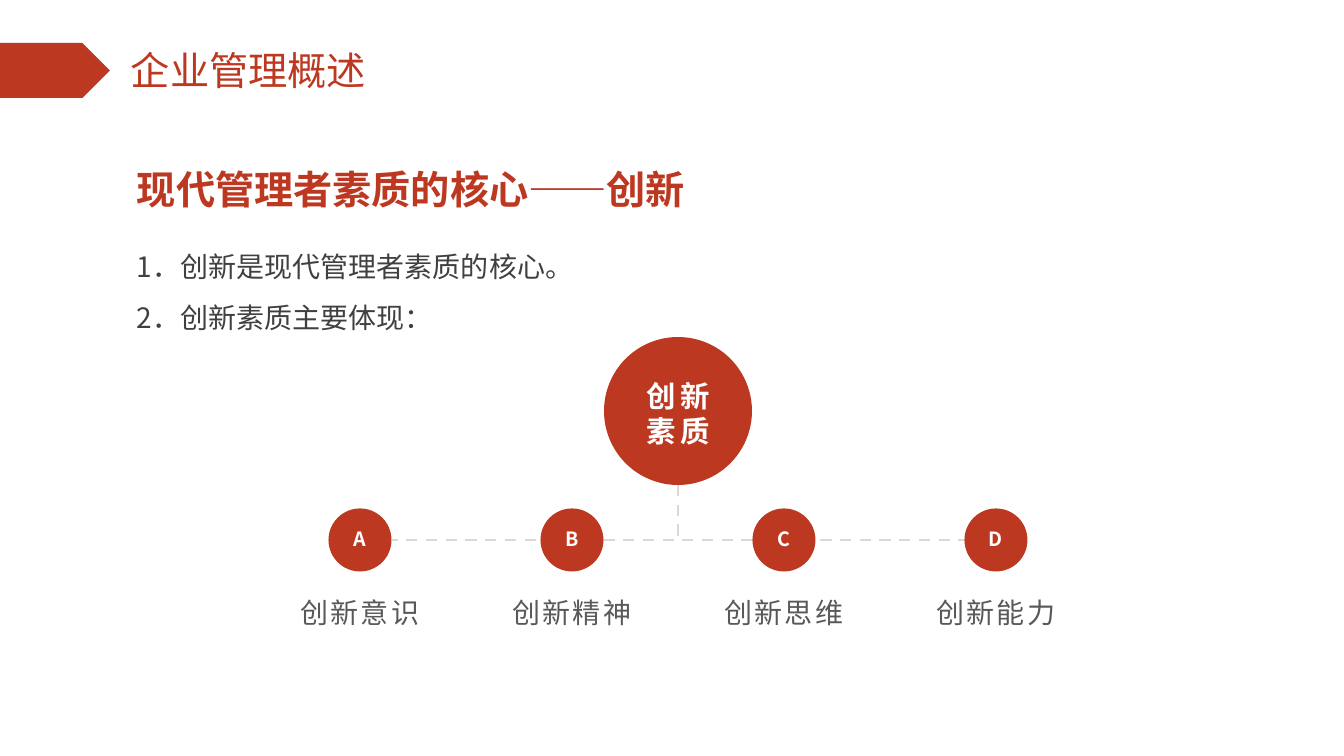
from pptx import Presentation
from pptx import util as u
from pptx.dml.color import RGBColor
from pptx.enum import dml, shapes, text
from pptx.oxml.ns import qn
from lxml import etree

# Content
TITLE = "企业管理概述"
HEADING = "现代管理者素质的核心——创新"
POINTS = ["1．创新是现代管理者素质的核心。", "2．创新素质主要体现："]
CORE = ["创新", "素质"]
QUALITIES = [("A", "创新意识"), ("B", "创新精神"), ("C", "创新思维"), ("D", "创新能力")]

FONT = "Noto Sans CJK SC"
RED = RGBColor(0xBD, 0x38, 0x20)
WHITE = RGBColor(0xFF, 0xFF, 0xFF)
DARK = RGBColor(0x40, 0x40, 0x40)
GRAY = RGBColor(0x59, 0x59, 0x59)
LIGHT = RGBColor(0xD9, 0xD9, 0xD9)

# Layout in px
SCALE = 914400 / 100.8
CORE_X, CORE_Y, CORE_SIZE = 678, 411, 148
NODE_Y, NODE_SIZE, NODE_PITCH = 540, 63, 212
LABEL_TOP, LABEL_WIDTH, LABEL_HEIGHT = 584, 180, 103


def px(*lengths):
    return [u.Emu(round(length * SCALE)) for length in lengths]


def write(shape, lines, size, color, bold=False, spacing=0, line_height=None,
          align=text.PP_ALIGN.LEFT, anchor=text.MSO_ANCHOR.TOP, insets=(10, 5, 10, 5)):
    frame = shape.text_frame
    frame.text = "\n".join(lines)
    frame.word_wrap = True
    frame.auto_size = text.MSO_AUTO_SIZE.NONE
    frame.vertical_anchor = anchor
    (frame.margin_left, frame.margin_top,
     frame.margin_right, frame.margin_bottom) = px(*insets)
    for paragraph in frame.paragraphs:
        paragraph.alignment = align
        paragraph.line_spacing = u.Pt(line_height) if line_height else 1.0
        paragraph.space_before = u.Pt(0)
        for run in paragraph.runs:
            font = run.font
            font.name, font.size, font.bold = FONT, u.Pt(size), bold
            font.color.rgb = color
            properties = run._r.get_or_add_rPr()
            etree.SubElement(properties, qn("a:ea")).set("typeface", FONT)
            if spacing:
                properties.set("spc", str(round(spacing * 100)))


def add_red_shape(kind, left, top, width, height):
    shape = slide.shapes.add_shape(kind, *px(left, top, width, height))
    shape.shadow.inherit = False
    shape.fill.solid()
    shape.fill.fore_color.rgb = RED
    shape.line.fill.background()
    return shape


def add_circle(center_x, center_y, size):
    return add_red_shape(shapes.MSO_SHAPE.OVAL, center_x - size / 2,
                         center_y - size / 2, size, size)


def add_branch(start_x, start_y, end_x, end_y):
    """Elbow that drops from the start, then turns sideways to the end."""
    center_x, center_y = (start_x + end_x) / 2, (start_y + end_y) / 2
    half_width, half_height = (end_y - start_y) / 2, abs(end_x - start_x) / 2
    to_right = end_x > start_x
    side = -1 if to_right else 1
    connector = slide.shapes.add_connector(
        shapes.MSO_CONNECTOR.ELBOW,
        *px(center_x - side * half_width, center_y - half_height,
            center_x + side * half_width, center_y + half_height))
    connector.line.color.rgb = LIGHT
    connector.line.width = u.Pt(2)
    connector.line.dash_style = dml.MSO_LINE.DASH
    properties = connector._element.spPr
    properties.find(qn("a:prstGeom")).set("prst", "bentConnector2")
    properties.find(qn("a:xfrm")).set("rot", str((270 if to_right else 90) * 60000))
    etree.SubElement(properties, qn("a:effectLst"))


presentation = Presentation()
presentation.slide_width, presentation.slide_height = px(1344, 756)
slide = presentation.slides.add_slide(presentation.slide_layouts[5])

# Title with its marker
add_red_shape(shapes.MSO_SHAPE.PENTAGON, 0, 43, 110, 55)
title = slide.shapes.title
title.left, title.top, title.width, title.height = px(121, 46, 309, 57)
write(title, [TITLE], 28, RED, insets=(10, 0, 10, 0))

# Heading and numbered points
heading = slide.shapes.add_textbox(*px(127, 151, 965, 76))
write(heading, [HEADING], 28, RED, bold=True, anchor=text.MSO_ANCHOR.MIDDLE)
points = slide.shapes.add_textbox(*px(127, 228, 778, 106))
write(points, POINTS, 20, DARK, line_height=36)

# Branches from the core to the outer nodes
node_xs = [CORE_X + (index - (len(QUALITIES) - 1) / 2) * NODE_PITCH
           for index in range(len(QUALITIES))]
core_bottom = CORE_Y + CORE_SIZE / 2
add_branch(CORE_X, core_bottom, node_xs[-1] - NODE_SIZE / 2, NODE_Y)
add_branch(CORE_X, core_bottom, node_xs[0] + NODE_SIZE / 2, NODE_Y)

# Core circle
core = add_circle(CORE_X, CORE_Y, CORE_SIZE)
write(core, CORE, 21, WHITE, bold=True, spacing=3, line_height=25,
      align=text.PP_ALIGN.CENTER, anchor=text.MSO_ANCHOR.MIDDLE, insets=(0, 5, 0, 0))

# Lettered nodes and their labels
for node_x, (letter, quality) in zip(node_xs, QUALITIES):
    node = add_circle(node_x, NODE_Y, NODE_SIZE)
    write(node, [letter], 14, WHITE, bold=True, spacing=1.5,
          align=text.PP_ALIGN.CENTER, anchor=text.MSO_ANCHOR.MIDDLE, insets=(0, 0, 0, 2))
    label = slide.shapes.add_textbox(
        *px(node_x - LABEL_WIDTH / 2, LABEL_TOP, LABEL_WIDTH, LABEL_HEIGHT))
    write(label, [quality], 20, GRAY, spacing=1.5,
          align=text.PP_ALIGN.CENTER, insets=(10, 11, 10, 5))

presentation.save("out.pptx")
